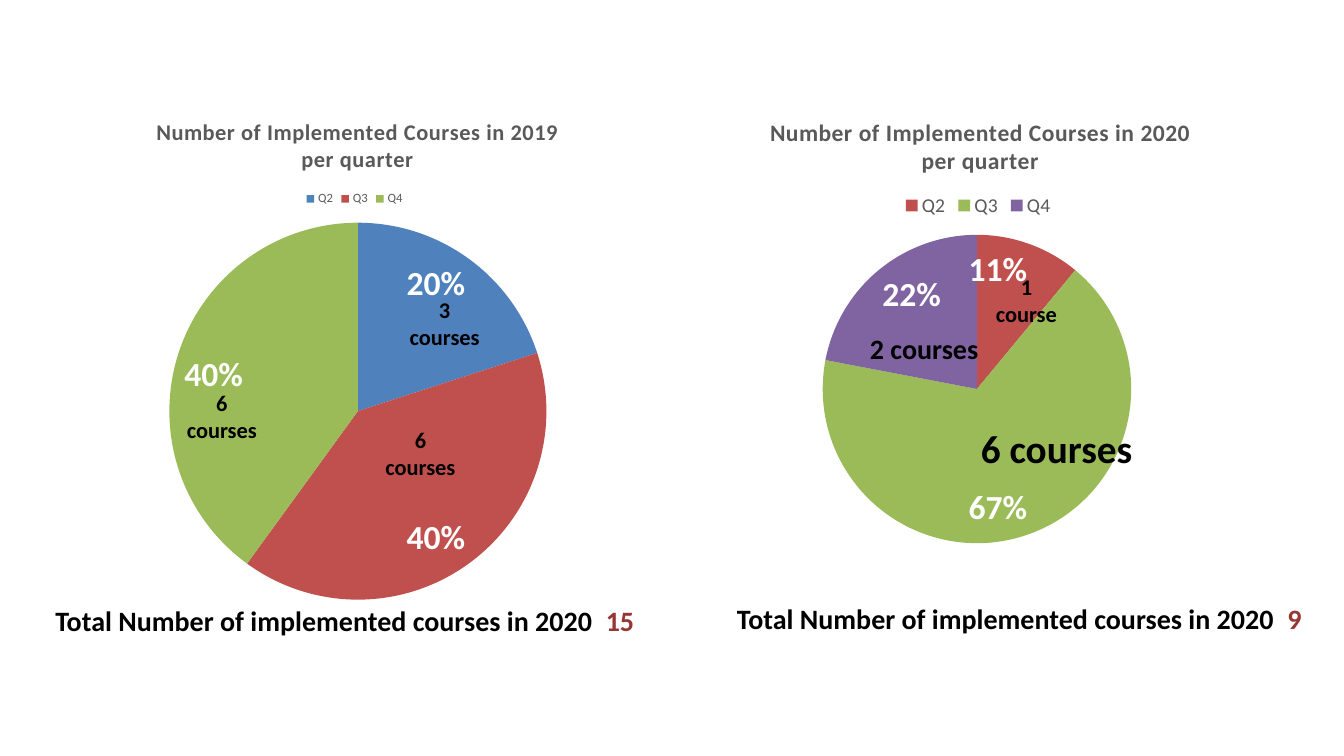
from dataclasses import dataclass

from lxml.etree import SubElement
from pptx import Presentation
from pptx.chart.data import CategoryChartData
from pptx.dml.color import RGBColor
from pptx.enum.chart import XL_CHART_TYPE, XL_LABEL_POSITION, XL_LEGEND_POSITION
from pptx.enum.text import MSO_AUTO_SIZE, PP_ALIGN
from pptx.oxml import parse_xml
from pptx.oxml.ns import nsdecls, qn
from pptx.util import Inches, Pt


@dataclass(frozen=True)
class Theme:
    font: str = "Calibri"
    text: RGBColor = RGBColor(0x00, 0x00, 0x00)
    muted: RGBColor = RGBColor(0x59, 0x59, 0x59)
    accent: RGBColor = RGBColor(0x95, 0x37, 0x35)
    label: RGBColor = RGBColor(0xFF, 0xFF, 0xFF)
    slices: tuple = ("4F81BD", "C0504D", "9BBB59", "8064A2")
    label_size: float = 24
    total_size: float = 20
    count_size: float = 16


THEME = Theme()


@dataclass(frozen=True)
class Quarters:
    year: int
    values: dict
    title_size: float
    legend_size: float
    legend_at: tuple
    pie_at: tuple
    diameter: float
    counts: tuple
    total: str
    total_box: tuple


def style_font(font, size, color, bold=True):
    font.name = THEME.font
    font.size = Pt(size)
    font.bold = bold
    font.color.rgb = color


def manual_layout(box, left, top, diameter=None):
    x, y, width, height = box
    settings = {"xMode": "edge", "yMode": "edge",
                "x": (left - x) / width, "y": (top - y) / height}
    if diameter:
        settings = {"layoutTarget": "inner", **settings,
                    "w": diameter / width, "h": diameter / height}
    layout = parse_xml(f"<c:layout {nsdecls('c')}><c:manualLayout/></c:layout>")
    for name, value in settings.items():
        SubElement(layout[0], qn(f"c:{name}")).set("val", str(value))
    return layout


def replace_layout(parent, layout, index):
    for old in parent.findall(qn("c:layout")):
        parent.remove(old)
    parent.insert(index, layout)


def hide_entry(parent, tag, index, position):
    parent.insert(position, parse_xml(
        f'<c:{tag} {nsdecls("c")}><c:idx val="{index}"/><c:delete val="1"/></c:{tag}>'))


def add_pie(slide, box, quarters):
    data = CategoryChartData()
    data.categories = list(quarters.values)
    data.add_series("Series 1", list(quarters.values.values()))
    chart = slide.shapes.add_chart(
        XL_CHART_TYPE.PIE, *map(Inches, box), data).chart
    style_font(chart.font, quarters.legend_size, THEME.text, False)

    chart.has_title = True
    title = chart.chart_title.text_frame
    title.text = f"Number of Implemented Courses in {quarters.year}\nper quarter"
    for paragraph in title.paragraphs:
        for run in paragraph.runs:
            style_font(run.font, quarters.title_size, THEME.muted)
            run.font._element.set("spc", "50")

    chart.has_legend = True
    legend = chart.legend
    legend.position = XL_LEGEND_POSITION.TOP
    legend.include_in_layout = False
    style_font(legend.font, quarters.legend_size, THEME.muted, False)
    replace_layout(legend._element, manual_layout(box, *quarters.legend_at), 1)
    plot_area = chart._chartSpace.chart.plotArea
    replace_layout(
        plot_area, manual_layout(box, *quarters.pie_at, quarters.diameter), 0)

    plot = chart.plots[0]
    plot.vary_by_categories = True
    series = plot.series[0]
    labels = series.data_labels
    labels.show_percentage = True
    labels.show_value = False
    labels.number_format = "0%"
    labels.number_format_is_linked = False
    labels.position = XL_LABEL_POSITION.INSIDE_END
    style_font(labels.font, THEME.label_size, THEME.label)

    for index, value in enumerate(quarters.values.values()):
        fill = series.points[index].format.fill
        fill.solid()
        fill.fore_color.rgb = RGBColor.from_string(THEME.slices[index])
        if value == 0:
            hide_entry(legend._element, "legendEntry", index, 1)
            hide_entry(labels._element, "dLbl", index, 0)


def add_text(slide, box, text, size, align=PP_ALIGN.LEFT):
    frame = slide.shapes.add_textbox(*map(Inches, box)).text_frame
    frame.word_wrap = True
    frame.auto_size = MSO_AUTO_SIZE.SHAPE_TO_FIT_TEXT
    frame.text = text
    for paragraph in frame.paragraphs:
        paragraph.alignment = align
        for run in paragraph.runs:
            style_font(run.font, size, THEME.text)
    return frame


def add_total(slide, box, total):
    frame = add_text(slide, box, "Total Number of implemented courses in 2020\t",
                     THEME.total_size)
    paragraph = frame.paragraphs[0]
    tabs = SubElement(paragraph._p.get_or_add_pPr(), qn("a:tabLst"))
    SubElement(tabs, qn("a:tab"), pos=str(Inches(5.46)), algn="l")
    run = paragraph.add_run()
    run.text = total
    style_font(run.font, THEME.total_size, THEME.accent)


def add_year(slide, box, quarters):
    add_pie(slide, box, quarters)
    for left, top, text, size in quarters.counts:
        stacked = "\n" in text
        add_text(slide, (left, top, 1.82, 0.64 if stacked else 0.44), text, size,
                 PP_ALIGN.CENTER if stacked else PP_ALIGN.LEFT)
    add_total(slide, quarters.total_box, quarters.total)


COURSES_2019 = Quarters(
    2019, {"Q2": 20, "Q3": 40, "Q4": 40}, 16, 9,
    (3.0, 1.86), (1.68, 2.21), 3.74,
    ((3.5, 2.89, "3\ncourses", THEME.count_size),
     (1.29, 3.81, "6\ncourses", THEME.count_size),
     (3.26, 4.18, "6\ncourses", THEME.count_size)),
    "15", (0.45, 5.94, 6.05, 0.44))

COURSES_2020 = Quarters(
    2020, {"Q1": 0, "Q2": 11, "Q3": 67, "Q4": 22}, 16.8, 14,
    (8.92, 1.88), (8.16, 2.33), 3.06,
    ((9.27, 2.66, "1\ncourse", THEME.count_size),
     (8.53, 3.24, "2 courses", 20),
     (9.63, 4.16, "6 courses", 28)),
    "9", (7.21, 5.92, 5.87, 0.44))


def main():
    presentation = Presentation()
    presentation.slide_width = Inches(13.33)
    presentation.slide_height = Inches(7.5)
    slide = presentation.slides.add_slide(presentation.slide_layouts[6])
    add_year(slide, (6.64, 0.98, 6.16, 4.96), COURSES_2020)
    add_year(slide, (0.59, 0.98, 5.91, 5.11), COURSES_2019)
    presentation.save("out.pptx")


if __name__ == "__main__":
    main()
